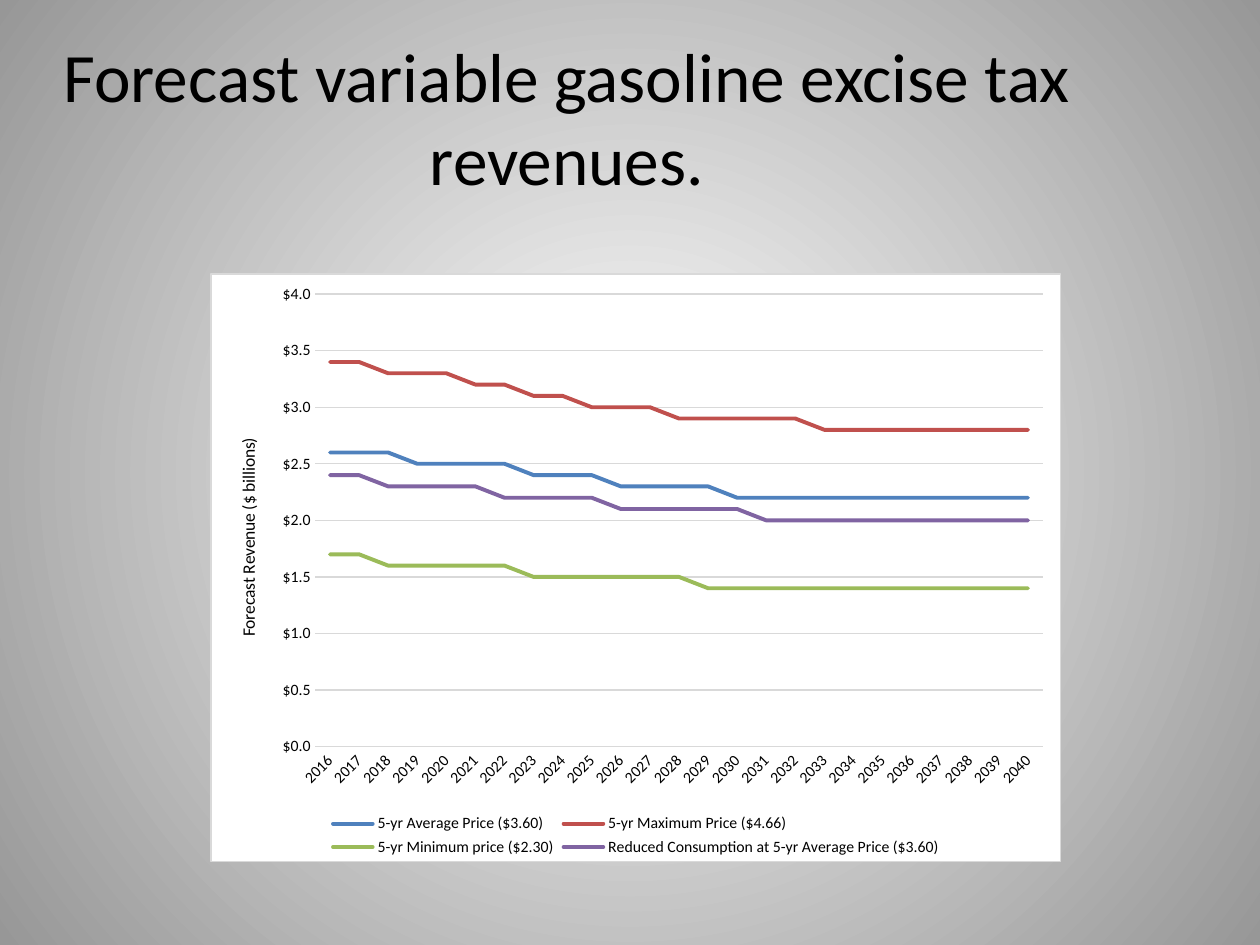
from lxml.etree import SubElement
from pptx import Presentation
from pptx.chart.data import CategoryChartData
from pptx.dml.color import RGBColor
from pptx.enum.chart import XL_CHART_TYPE, XL_LEGEND_POSITION, XL_TICK_MARK
from pptx.enum.text import MSO_ANCHOR, PP_ALIGN
from pptx.oxml import parse_xml
from pptx.oxml.ns import nsdecls, qn
from pptx.util import Inches, Pt

FONT = "Calibri"
BLACK, WHITE, PALE_GRAY, MID_GRAY = "000000", "FFFFFF", "D9D9D9", "979797"
CHART_WIDTH, CHART_HEIGHT = Inches(6.75), Inches(4.67)
YEARS = [str(year) for year in range(2016, 2041)]
FORECASTS = [
    ("5-yr Average Price ($3.60)", "4F81BD",
     [2.6, 2.6, 2.6, 2.5, 2.5, 2.5, 2.5, 2.4, 2.4, 2.4, 2.3, 2.3, 2.3,
      2.3, 2.2, 2.2, 2.2, 2.2, 2.2, 2.2, 2.2, 2.2, 2.2, 2.2, 2.2]),
    ("5-yr Maximum Price ($4.66)", "C0504D",
     [3.4, 3.4, 3.3, 3.3, 3.3, 3.2, 3.2, 3.1, 3.1, 3.0, 3.0, 3.0, 2.9,
      2.9, 2.9, 2.9, 2.9, 2.8, 2.8, 2.8, 2.8, 2.8, 2.8, 2.8, 2.8]),
    ("5-yr Minimum price ($2.30)", "9BBB59",
     [1.7, 1.7, 1.6, 1.6, 1.6, 1.6, 1.6, 1.5, 1.5, 1.5, 1.5, 1.5, 1.5,
      1.4, 1.4, 1.4, 1.4, 1.4, 1.4, 1.4, 1.4, 1.4, 1.4, 1.4, 1.4]),
    ("Reduced Consumption at 5-yr Average Price ($3.60)", "8064A2",
     [2.4, 2.4, 2.3, 2.3, 2.3, 2.3, 2.2, 2.2, 2.2, 2.2, 2.1, 2.1, 2.1,
      2.1, 2.1, 2.0, 2.0, 2.0, 2.0, 2.0, 2.0, 2.0, 2.0, 2.0, 2.0]),
]


def rgb(color):
    return RGBColor.from_string(color)


def style_font(font, size):
    font.name = FONT
    font.size = Pt(size)
    font.bold = False
    font.color.rgb = rgb(BLACK)


def style_line(line, color, width):
    line.color.rgb = rgb(color)
    line.width = Pt(width)


def paint_background(page):
    """Fill the page with a gradient that runs from the centre outwards."""
    fill = page.background.fill
    fill.gradient()
    for stop, color in zip(fill.gradient_stops, (WHITE, MID_GRAY)):
        stop.color.rgb = rgb(color)
    gradient = page.element.find(".//" + qn("a:gradFill"))
    gradient.remove(gradient.find(qn("a:lin")))
    circle = SubElement(gradient, qn("a:path"), path="circle")
    SubElement(circle, qn("a:fillToRect"), l="50000", t="50000", r="50000", b="50000")


def add_title(page, text):
    title = page.shapes.title
    title.left, title.top = Inches(0), Inches(0.3)
    title.width, title.height = Inches(9), Inches(1.25)
    frame = title.text_frame
    frame.word_wrap = True
    frame.vertical_anchor = MSO_ANCHOR.MIDDLE
    paragraph = frame.paragraphs[0]
    paragraph.alignment = PP_ALIGN.CENTER
    span = paragraph.add_run()
    span.text = text
    style_font(span.font, 39.6)


def set_layout(element, index, left, top, width=None, height=None):
    """Place a chart part by lengths measured from the chart's corner."""
    for old in element.findall(qn("c:layout")):
        element.remove(old)
    settings = {"xMode": "edge", "yMode": "edge",
                "x": left / CHART_WIDTH, "y": top / CHART_HEIGHT}
    if width and height:
        settings = {"layoutTarget": "inner", **settings,
                    "w": width / CHART_WIDTH, "h": height / CHART_HEIGHT}
    layout = parse_xml(f"<c:layout {nsdecls('c')}><c:manualLayout/></c:layout>")
    for name, value in settings.items():
        SubElement(layout[0], qn("c:" + name), val=str(value))
    element.insert(index, layout)


def style_chart_area(chart):
    chart_part = chart.element.find(qn("c:chart"))
    chart_part.addnext(parse_xml(
        f"<c:spPr {nsdecls('c', 'a')}>"
        f'<a:solidFill><a:srgbClr val="{WHITE}"/></a:solidFill>'
        f'<a:ln w="{Pt(0.75)}"><a:solidFill><a:srgbClr val="{PALE_GRAY}"/></a:solidFill></a:ln>'
        "</c:spPr>"))
    set_layout(chart_part.find(qn("c:plotArea")), 0,
               Inches(0.83), Inches(0.16), Inches(5.78), Inches(3.6))


def turn_text(body, degrees):
    body.set("rot", str(degrees * 60000))
    body.set("vert", "horz")


def style_axis(axis):
    axis.major_tick_mark = XL_TICK_MARK.NONE
    axis.minor_tick_mark = XL_TICK_MARK.NONE
    style_font(axis.tick_labels.font, 9)


def style_year_axis(axis):
    style_axis(axis)
    style_line(axis.format.line, PALE_GRAY, 0.75)
    turn_text(axis._element.find(qn("c:txPr")).find(qn("a:bodyPr")), -45)


def style_revenue_axis(axis):
    style_axis(axis)
    axis.minimum_scale, axis.maximum_scale, axis.major_unit = 0, 4, 0.5
    axis.format.line.fill.background()
    axis.has_major_gridlines = True
    style_line(axis.major_gridlines.format.line, PALE_GRAY, 0.75)
    axis.tick_labels.number_format = '"$"#,##0.0'
    axis.tick_labels.number_format_is_linked = False
    axis.has_title = True
    span = axis.axis_title.text_frame.paragraphs[0].add_run()
    span.text = "Forecast Revenue ($ billions)"
    style_font(span.font, 10)
    title = axis._element.find(qn("c:title"))
    turn_text(title.find(".//" + qn("a:bodyPr")), -90)
    set_layout(title, 1, Inches(0.18), Inches(1.28))


def add_forecast_chart(page):
    data = CategoryChartData(number_format='"$"#,##0.0')
    data.categories = YEARS
    for name, _, values in FORECASTS:
        data.add_series(name, values)
    chart = page.shapes.add_chart(XL_CHART_TYPE.LINE, Inches(1.67), Inches(2.17),
                                  CHART_WIDTH, CHART_HEIGHT, data).chart
    style_font(chart.font, 10)
    chart.has_title = False
    chart.plots[0].vary_by_categories = False
    for series, (_, color, _) in zip(chart.plots[0].series, FORECASTS):
        series.smooth = False
        style_line(series.format.line, color, 2.25)
        series.format.line._ln.set("cap", "rnd")
    style_year_axis(chart.category_axis)
    style_revenue_axis(chart.value_axis)
    chart.has_legend = True
    chart.legend.position = XL_LEGEND_POSITION.BOTTOM
    chart.legend.include_in_layout = False
    style_font(chart.legend.font, 9)
    style_chart_area(chart)


def main():
    deck = Presentation()
    deck.slide_width, deck.slide_height = Inches(10), Inches(7.5)
    page = deck.slides.add_slide(deck.slide_layouts[5])
    paint_background(page)
    add_title(page, "Forecast variable gasoline excise tax revenues.")
    add_forecast_chart(page)
    deck.save("out.pptx")


if __name__ == "__main__":
    main()
